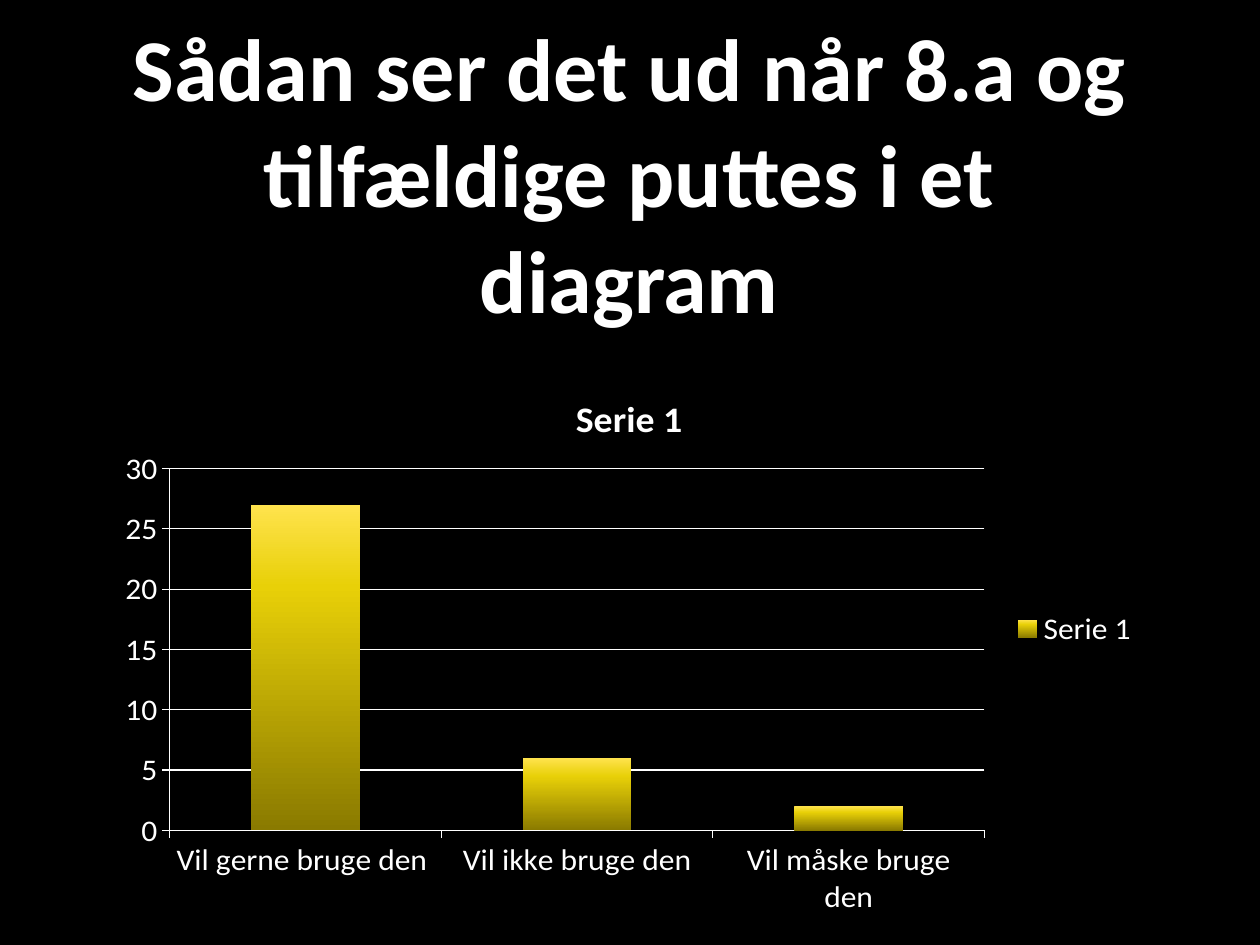
from dataclasses import dataclass

from lxml.etree import SubElement
from pptx import Presentation
from pptx.chart.data import CategoryChartData
from pptx.dml.color import RGBColor
from pptx.enum.chart import XL_CHART_TYPE, XL_LEGEND_POSITION, XL_TICK_MARK
from pptx.enum.text import MSO_ANCHOR, PP_ALIGN
from pptx.oxml import parse_xml
from pptx.oxml.ns import nsdecls, qn
from pptx.util import Pt


@dataclass(frozen=True)
class Theme:
    font: str = "Calibri"
    background: str = "000000"
    foreground: str = "FFFFFF"
    bar_stops: tuple = ((0, "FFE34D"), (25, "E8D008"), (100, "8A7A00"))
    title_size: float = 50.4
    chart_title_size: float = 21.6
    chart_size: float = 18
    line_width: float = 0.75


THEME = Theme()


def format_font(font, size, bold=False, color=THEME.foreground):
    font.name = THEME.font
    font.size = Pt(size)
    font.bold = bold
    font.color.rgb = RGBColor.from_string(color)


def write_text(text_frame, text, size, bold=False, align=PP_ALIGN.CENTER):
    paragraph = text_frame.paragraphs[0]
    paragraph.alignment = align
    run = paragraph.add_run()
    run.text = text
    format_font(run.font, size, bold)


def format_line(line):
    line.color.rgb = RGBColor.from_string(THEME.foreground)
    line.width = Pt(THEME.line_width)


def add_title(slide, box, text):
    text_frame = slide.shapes.add_textbox(*map(Pt, box)).text_frame
    text_frame.word_wrap = True
    text_frame.vertical_anchor = MSO_ANCHOR.MIDDLE
    write_text(text_frame, text, THEME.title_size, bold=True)


def fill_with_gradient(series):
    stops = "".join(
        f'<a:gs pos="{position * 1000}"><a:srgbClr val="{color}"/></a:gs>'
        for position, color in THEME.bar_stops
    )
    gradient = parse_xml(
        f'<a:gradFill {nsdecls("a")} rotWithShape="1"><a:gsLst>{stops}</a:gsLst>'
        '<a:lin ang="5400000" scaled="0"/></a:gradFill>'
    )
    series.format.line.fill.background()
    series._element.spPr.insert(0, gradient)


def place_plot(chart, left, top, width, height):
    plot_area = chart._chartSpace.chart.plotArea
    for old_layout in plot_area.findall(qn("c:layout")):
        plot_area.remove(old_layout)
    layout = parse_xml(f'<c:layout {nsdecls("c")}/>')
    manual = SubElement(layout, qn("c:manualLayout"))
    settings = {
        "layoutTarget": "inner", "xMode": "edge", "yMode": "edge",
        "x": left, "y": top, "w": width, "h": height,
    }
    for name, value in settings.items():
        SubElement(manual, qn(f"c:{name}")).set("val", str(value))
    plot_area.insert(0, layout)


def add_answer_chart(slide, box, series_name, answers):
    chart_data = CategoryChartData()
    chart_data.categories = list(answers)
    chart_data.add_series(series_name, list(answers.values()))
    chart = slide.shapes.add_chart(
        XL_CHART_TYPE.COLUMN_CLUSTERED, *map(Pt, box), chart_data
    ).chart
    format_font(chart.font, THEME.chart_size)

    chart.has_title = True
    write_text(chart.chart_title.text_frame, series_name,
               THEME.chart_title_size, bold=True)
    chart.chart_title.include_in_layout = False
    chart.has_legend = True
    chart.legend.position = XL_LEGEND_POSITION.RIGHT
    chart.legend.include_in_layout = False

    for axis in (chart.category_axis, chart.value_axis):
        axis.major_tick_mark = XL_TICK_MARK.OUTSIDE
        axis.minor_tick_mark = XL_TICK_MARK.NONE
        format_line(axis.format.line)
    chart.value_axis.minimum_scale = 0
    chart.value_axis.maximum_scale = 30
    chart.value_axis.major_unit = 5
    chart.value_axis.has_major_gridlines = True
    format_line(chart.value_axis.major_gridlines.format.line)

    plot = chart.plots[0]
    plot.vary_by_categories = False
    plot.gap_width = 150
    fill_with_gradient(plot.series[0])
    place_plot(chart, 0.06, 0.19, 0.78, 0.7)


def main():
    presentation = Presentation()
    presentation.slide_width = Pt(720)
    presentation.slide_height = Pt(540)
    slide = presentation.slides.add_slide(presentation.slide_layouts[6])
    slide.background.fill.solid()
    slide.background.fill.fore_color.rgb = RGBColor.from_string(THEME.background)

    left, width = 61.2, 596.9
    add_title(slide, (left, 33.1, width, 130.3),
              "Sådan ser det ud når 8.a og tilfældige puttes i et diagram")
    add_answer_chart(
        slide, (left, 211.7, width, 311), "Serie 1",
        {"Vil gerne bruge den ": 27, "Vil ikke bruge den": 6,
         "Vil måske bruge den": 2},
    )
    presentation.save("out.pptx")


if __name__ == "__main__":
    main()
